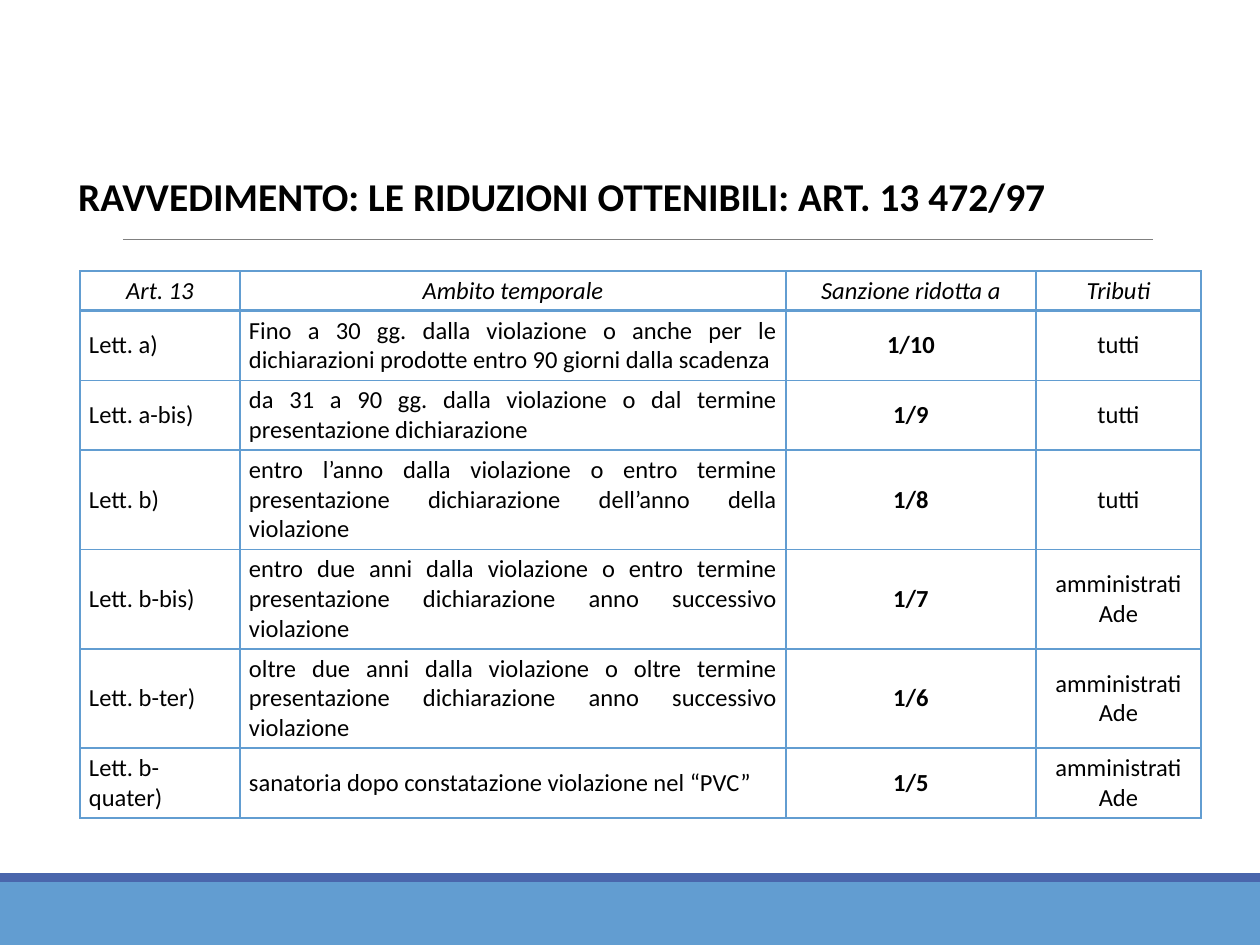
from dataclasses import dataclass

from lxml import etree
from pptx import Presentation
from pptx.dml.color import RGBColor
from pptx.enum.shapes import MSO_CONNECTOR, MSO_SHAPE
from pptx.enum.text import MSO_ANCHOR, MSO_AUTO_SIZE, PP_ALIGN
from pptx.oxml.ns import qn
from pptx.util import Emu, Pt

RECTANGLE = MSO_SHAPE.RECTANGLE
STRAIGHT = MSO_CONNECTOR.STRAIGHT
TOP, MIDDLE = MSO_ANCHOR.TOP, MSO_ANCHOR.MIDDLE
LEFT, CENTER, JUSTIFY = PP_ALIGN.LEFT, PP_ALIGN.CENTER, PP_ALIGN.JUSTIFY
NO_AUTOFIT = MSO_AUTO_SIZE.NONE

EMU_PER_PX = 914400 / 126
WIDTH, HEIGHT = 1260, 945
TITLE_ONLY = 5


@dataclass(frozen=True)
class Theme:
    font: str = "Calibri"
    title_size: float = 22.5
    table_size: float = 14
    text: str = "000000"
    paper: str = "FFFFFF"
    light_blue: str = "629DD1"
    dark_blue: str = "4A66AC"
    grey: str = "808080"


TITLE = "RAVVEDIMENTO: LE RIDUZIONI OTTENIBILI: ART. 13 472/97"
REDUCTIONS = [
    ("Art. 13", "Ambito temporale", "Sanzione ridotta a", "Tributi"),
    ("Lett. a)", "Fino a 30 gg. dalla violazione o anche per le dichiarazioni "
     "prodotte entro 90 giorni dalla scadenza", "1/10", "tutti"),
    ("Lett. a-bis)", "da 31 a 90 gg. dalla violazione o dal termine "
     "presentazione dichiarazione", "1/9", "tutti"),
    ("Lett. b)", "entro l’anno dalla violazione o entro termine presentazione "
     "dichiarazione dell’anno della violazione", "1/8", "tutti"),
    ("Lett. b-bis)", "entro due anni dalla violazione o entro termine presentazione "
     "dichiarazione anno successivo violazione", "1/7", "amministrati Ade"),
    ("Lett. b-ter)", "oltre due anni dalla violazione o oltre termine presentazione "
     "dichiarazione anno successivo violazione", "1/6", "amministrati Ade"),
    ("Lett. b-quater)", "sanatoria dopo constatazione violazione nel “PVC”",
     "1/5", "amministrati Ade"),
]
COLUMN_WIDTHS = [160, 546, 250, 165]
ROW_HEIGHTS = [39, 69, 69, 99, 99, 99, 69]
COLUMN_ALIGNMENTS = [LEFT, JUSTIFY, CENTER, CENTER]
RATE_COLUMN = 2


def px(length):
    return Emu(round(length * EMU_PER_PX))


class SlideBuilder:
    def __init__(self, slide, theme):
        self.slide = slide
        self.theme = theme

    def set_text(self, frame, text, size, align, bold=False, italic=False):
        frame.text = text
        paragraph = frame.paragraphs[0]
        paragraph.alignment = align
        font = paragraph.font
        font.name, font.size = self.theme.font, Pt(size)
        font.bold, font.italic = bold, italic
        font.color.rgb = RGBColor.from_string(self.theme.text)

    def title(self, text, left, top, width, height):
        heading = self.slide.shapes.title
        heading.left, heading.top = px(left), px(top)
        heading.width, heading.height = px(width), px(height)
        frame = heading.text_frame
        frame.auto_size = NO_AUTOFIT
        frame.vertical_anchor = MIDDLE
        self.set_text(frame, text, self.theme.title_size, CENTER, bold=True)

    def band(self, top, height, color):
        band = self.slide.shapes.add_shape(RECTANGLE, 0, px(top), px(WIDTH), px(height))
        band.shadow.inherit = False
        band.fill.solid()
        band.fill.fore_color.rgb = RGBColor.from_string(color)
        band.line.fill.background()

    def rule(self, left, right, y):
        rule = self.slide.shapes.add_connector(STRAIGHT, px(left), px(y), px(right), px(y))
        rule.line.color.rgb = RGBColor.from_string(self.theme.grey)
        rule.line.width = Pt(0.5)
        etree.SubElement(rule._element.spPr, qn("a:effectLst"))

    def borders(self, cell, **widths):
        """Draw the cell's edges; widths are points keyed by L, R, T and B."""
        properties = cell._tc.get_or_add_tcPr()
        for position, (side, width) in enumerate(widths.items()):
            edge = etree.Element(qn(f"a:ln{side}"), w=str(Pt(width)))
            fill = etree.SubElement(edge, qn("a:solidFill"))
            etree.SubElement(fill, qn("a:srgbClr"), val=self.theme.light_blue)
            properties.insert(position, edge)

    def table(self, rows, left, top, widths, heights):
        table = self.slide.shapes.add_table(
            len(rows), len(widths), px(left), px(top), px(sum(widths)), px(sum(heights))
        ).table
        table.first_row = table.horz_banding = False
        for column, width in zip(table.columns, widths):
            column.width = px(width)
        for row, height in zip(table.rows, heights):
            row.height = px(height)
        for r, texts in enumerate(rows):
            header = r == 0
            for c, text in enumerate(texts):
                cell = table.cell(r, c)
                cell.margin_left = cell.margin_right = px(9)
                cell.margin_top = cell.margin_bottom = px(5)
                cell.vertical_anchor = TOP if header else MIDDLE
                cell.fill.solid()
                cell.fill.fore_color.rgb = RGBColor.from_string(self.theme.paper)
                self.borders(cell, L=1, R=1, T=2 if r == 1 else 1, B=2 if header else 1)
                self.set_text(cell.text_frame, text, self.theme.table_size,
                              CENTER if header else COLUMN_ALIGNMENTS[c],
                              bold=not header and c == RATE_COLUMN, italic=header)


def main():
    presentation = Presentation()
    presentation.slide_width, presentation.slide_height = px(WIDTH), px(HEIGHT)
    theme = Theme()
    slide = presentation.slides.add_slide(presentation.slide_layouts[TITLE_ONLY])
    builder = SlideBuilder(slide, theme)
    builder.band(882, 63, theme.light_blue)
    builder.band(873, 9, theme.dark_blue)
    builder.rule(123, 1153, 239)
    builder.title(TITLE, -10, 159, 1145, 74)
    builder.table(REDUCTIONS, 80, 271, COLUMN_WIDTHS, ROW_HEIGHTS)
    presentation.save("out.pptx")


if __name__ == "__main__":
    main()
